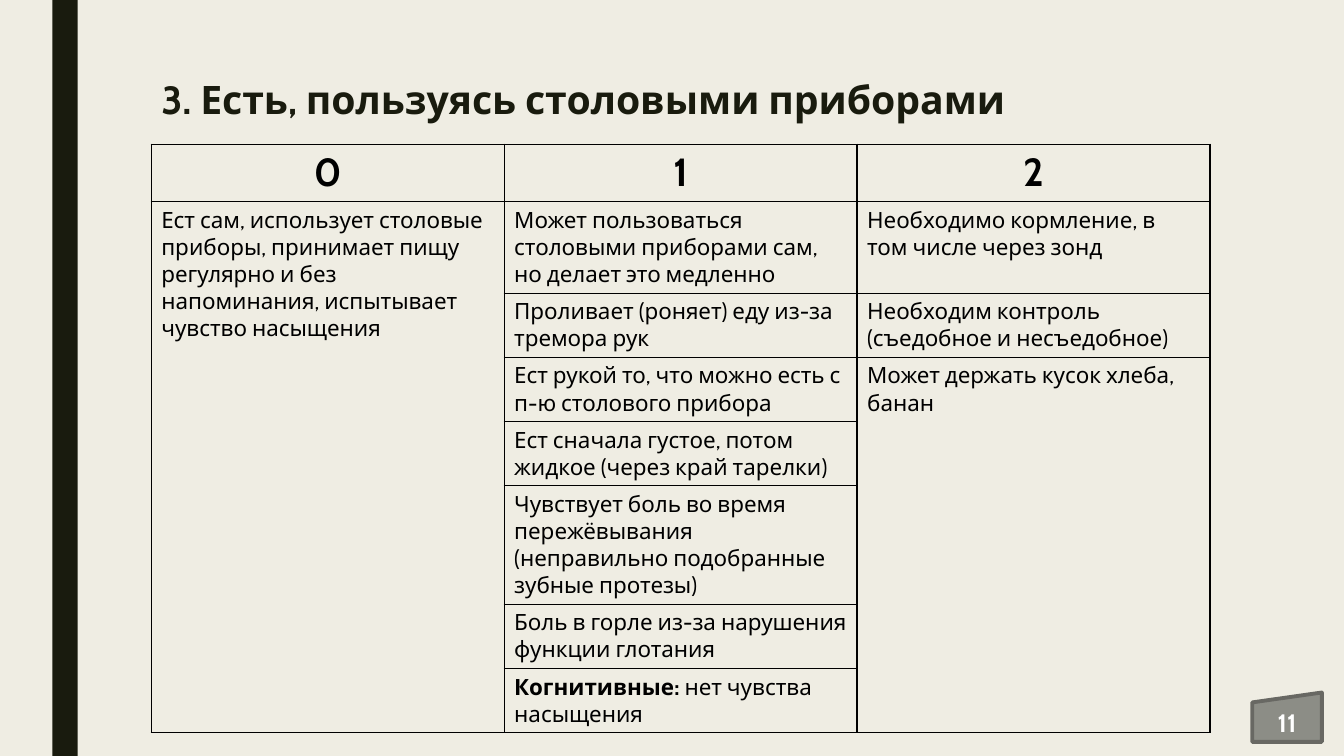
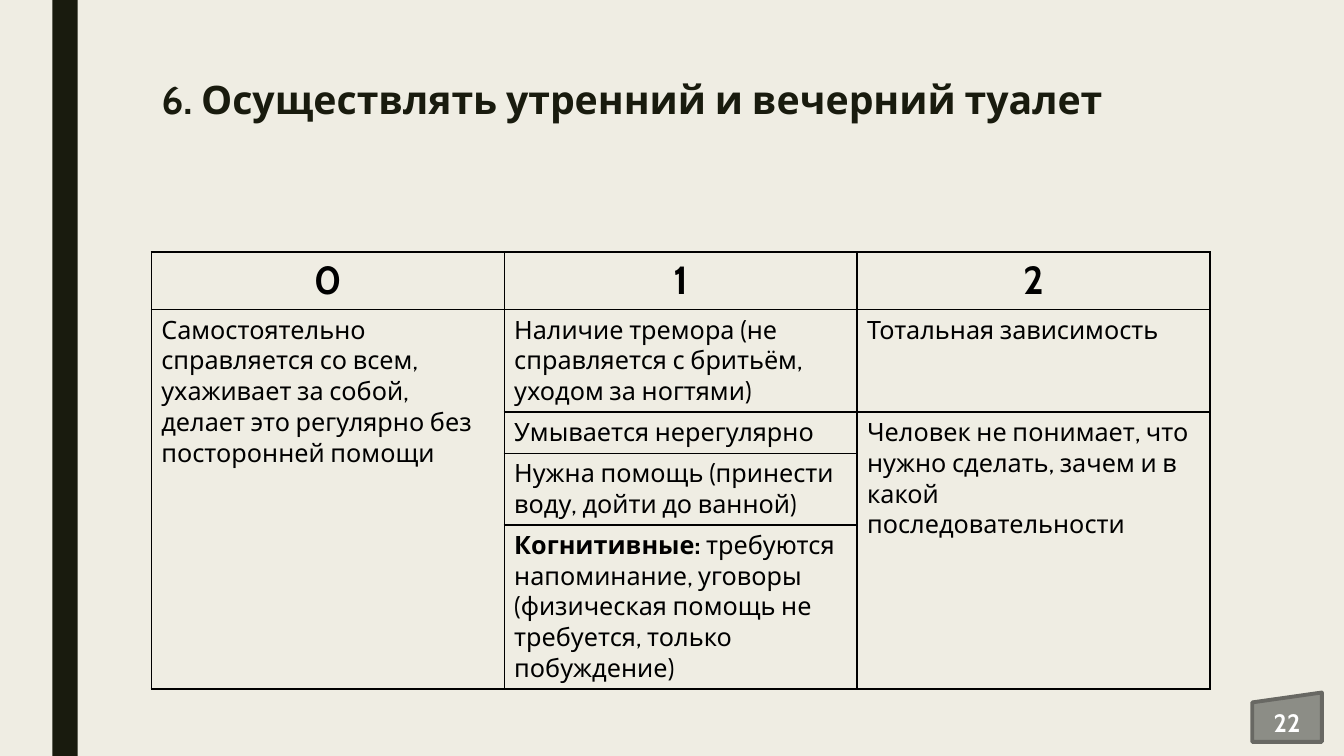
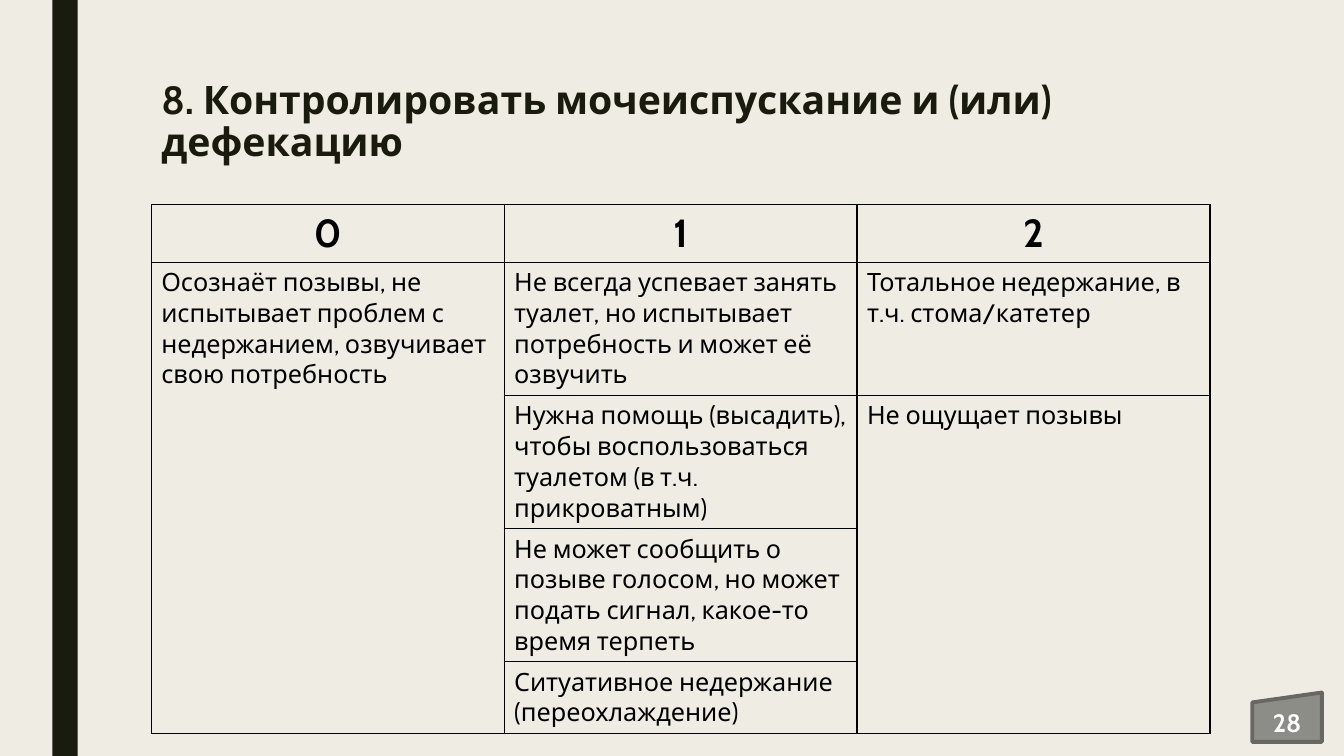
from lxml import etree
from pptx import Presentation
from pptx.dml.color import RGBColor
from pptx.enum.shapes import MSO_SHAPE as Shape
from pptx.enum.text import MSO_ANCHOR as Anchor, MSO_AUTO_SIZE as Fit, PP_ALIGN as Align
from pptx.oxml.ns import qn
from pptx.util import Inches, Pt

FONT = "Cabin"
PAPER, DARK, GRAY, EDGE = "EFEDE3", "191B0E", "8C8D86", "686863"
BLACK, WHITE = "000000", "FFFFFF"
LEFT, WIDTH = 1.5, 10.5
LEAD = "Когнитивные: "
HEAD = ("0", "1", "2")

# Each slide: title, number, table top, text size, rows; None continues the cell above
SLIDES = [
    ("3. Есть, пользуясь столовыми приборами", 11, 1.43, 16, [
        ("Ест сам, использует столовые приборы, принимает пищу регулярно и без "
         "напоминания, испытывает чувство насыщения",
         "Может пользоваться столовыми приборами сам, но делает это медленно",
         "Необходимо кормление, в том числе через зонд"),
        (None, "Проливает (роняет) еду из-за тремора рук",
         "Необходим контроль (съедобное и несъедобное)"),
        (None, "Ест рукой то, что можно есть с п-ю столового прибора",
         "Может держать кусок хлеба, банан"),
        (None, "Ест сначала густое, потом жидкое (через край тарелки)", None),
        (None, "Чувствует боль во время пережёвывания (неправильно подобранные "
         "зубные протезы)", None),
        (None, "Боль в горле из-за нарушения функции глотания", None),
        (None, LEAD + "нет чувства насыщения", None),
    ]),
    ("6. Осуществлять утренний и вечерний туалет", 22, 2.5, 18, [
        ("Самостоятельно справляется со всем, ухаживает за собой, делает это "
         "регулярно без посторонней помощи",
         "Наличие тремора (не справляется с бритьём, уходом за ногтями)",
         "Тотальная зависимость"),
        (None, "Умывается нерегулярно",
         "Человек не понимает, что нужно сделать, зачем и в какой последовательности"),
        (None, "Нужна помощь (принести воду, дойти до ванной)", None),
        (None, LEAD + "требуются напоминание, уговоры (физическая помощь не "
         "требуется, только побуждение)", None),
    ]),
    ("8. Контролировать мочеиспускание и (или) дефекацию", 28, 2.03, 18, [
        ("Осознаёт позывы, не испытывает проблем с недержанием, озвучивает "
         "свою потребность",
         "Не всегда успевает занять туалет, но испытывает потребность и может её озвучить",
         "Тотальное недержание, в т.ч. стома/катетер"),
        (None, "Нужна помощь (высадить), чтобы воспользоваться туалетом "
         "(в т.ч. прикроватным)", "Не ощущает позывы"),
        (None, "Не может сообщить о позыве голосом, но может подать сигнал, "
         "какое-то время терпеть", None),
        (None, "Ситуативное недержание (переохлаждение)", None),
    ]),
]


def rgb(code):
    return RGBColor.from_string(code)


def style(para, size, color, bold=None, align=Align.LEFT):
    para.alignment = align
    font = para.font
    font.name, font.size, font.bold = FONT, Pt(size), bold
    font.color.rgb = rgb(color)


def add_box(slide, kind, x, y, w, h, fill):
    box = slide.shapes.add_shape(kind, Inches(x), Inches(y), Inches(w), Inches(h))
    box.shadow.inherit = False
    box.fill.solid()
    box.fill.fore_color.rgb = rgb(fill)
    box.line.fill.background()
    return box


def add_band(prs, slide):
    """Draw the side band on a slide and move it to the master."""
    band = add_box(slide, Shape.RECTANGLE, 0.52, 0, 0.25, 7.5, DARK)
    prs.slide_master.element.cSld.spTree.insert(2, band.element)


def set_title(slide, text):
    title = slide.shapes.title
    title.left, title.top = Inches(LEFT), Inches(0.75)
    title.width, title.height = Inches(WIDTH), Inches(0.98)
    frame = title.text_frame
    frame.text = text
    frame.word_wrap = True
    frame.auto_size = Fit.NONE
    frame.vertical_anchor = Anchor.TOP
    para = frame.paragraphs[0]
    para.line_spacing = 0.89
    style(para, 28, DARK, True)


def add_number(slide, number):
    tag = add_box(slide, Shape.FLOWCHART_MANUAL_INPUT, 12.42, 6.87, 0.69, 0.49, GRAY)
    tag.line.color.rgb = rgb(EDGE)
    tag.line.width = Pt(2.75)
    frame = tag.text_frame
    frame.text = str(number)
    frame.vertical_anchor = Anchor.MIDDLE
    style(frame.paragraphs[0], 18, WHITE, True, Align.CENTER)


def add_border(cell):
    props = cell._tc.get_or_add_tcPr()
    for i, side in enumerate("LRTB"):
        line = etree.Element(qn("a:ln" + side), w=str(Pt(1)))
        fill = etree.SubElement(line, qn("a:solidFill"))
        etree.SubElement(fill, qn("a:srgbClr"), val=BLACK)
        props.insert(i, line)


def fill_cell(cell, text, size, head):
    para = cell.text_frame.paragraphs[0]
    style(para, size, BLACK, head, Align.CENTER if head else Align.LEFT)
    if text.startswith(LEAD):
        para.add_run().text = LEAD
        para.runs[0].font.bold = True
        text = text.removeprefix(LEAD)
    para.add_run().text = text


def add_scale(slide, top, size, body):
    """Add the score table, joining each cell with the empty ones below it."""
    rows = [HEAD, *body]
    count = len(rows)
    table = slide.shapes.add_table(count, len(HEAD), Inches(LEFT), Inches(top),
                                   Inches(WIDTH), Inches(0.41 * count)).table
    table.first_row = table.horz_banding = False
    for r, row in enumerate(rows):
        for c, text in enumerate(row):
            cell = table.cell(r, c)
            cell.fill.background()
            add_border(cell)
            if text is None:
                continue
            fill_cell(cell, text, 28 if r == 0 else size, r == 0)
            last = r
            while last + 1 < count and rows[last + 1][c] is None:
                last += 1
            if last > r:
                cell.merge(table.cell(last, c))


def main():
    prs = Presentation()
    prs.slide_width, prs.slide_height = Inches(13.33), Inches(7.5)
    back = prs.slide_master.background.fill
    back.solid()
    back.fore_color.rgb = rgb(PAPER)
    for title, number, top, size, body in SLIDES:
        slide = prs.slides.add_slide(prs.slide_layouts[5])
        set_title(slide, title)
        add_number(slide, number)
        add_scale(slide, top, size, body)
    add_band(prs, slide)
    prs.save("out.pptx")


if __name__ == "__main__":
    main()
